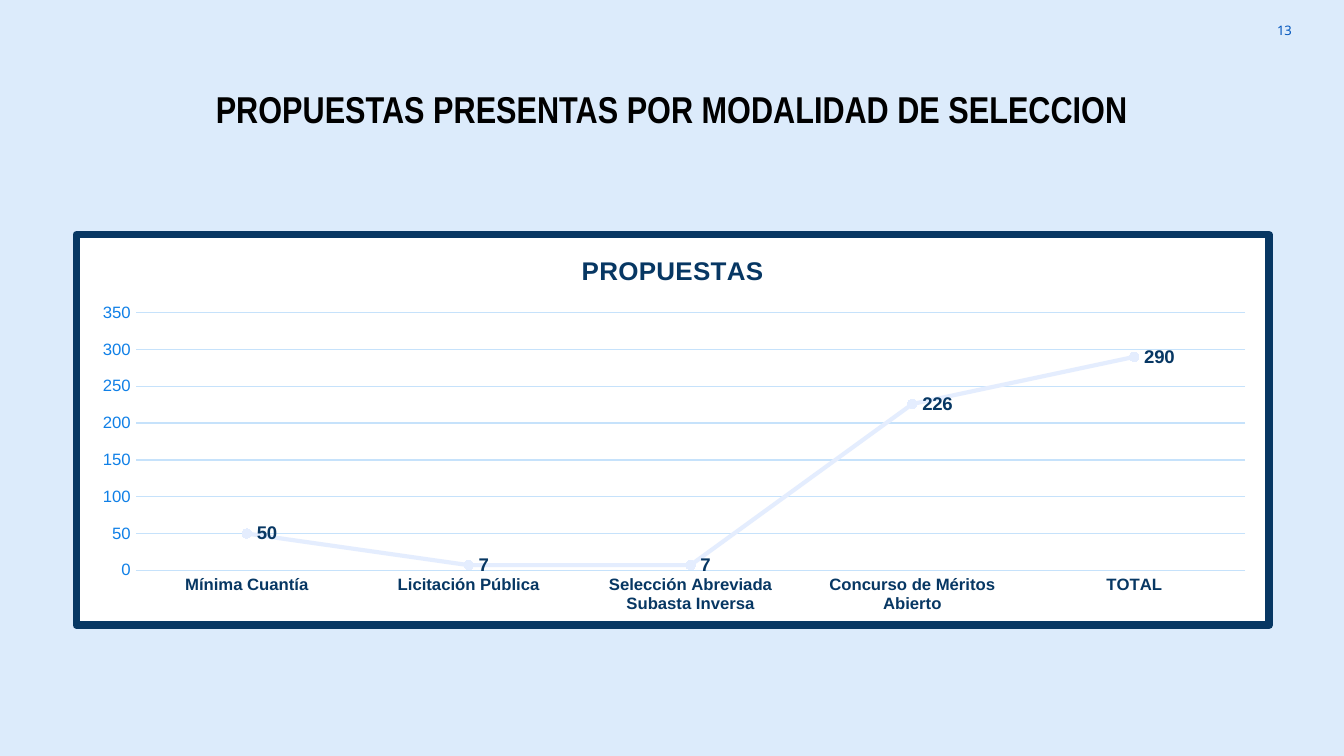
"""Build the slide of proposals by selection method."""
from lxml import etree
from pptx import Presentation
from pptx import util as u
from pptx.chart.data import CategoryChartData
from pptx.dml.color import RGBColor
from pptx.enum import chart as charts, text
from pptx.oxml import ns, parse_xml

TITLE = "PROPUESTAS PRESENTAS POR MODALIDAD DE SELECCION"
CHART_TITLE = "PROPUESTAS"
PROPOSALS = {
    "Mínima Cuantía": 50,
    "Licitación Pública": 7,
    "Selección Abreviada Subasta Inversa": 7,
    "Concurso de Méritos Abierto": 226,
    "TOTAL": 290,
}
NAVY, GRID, SERIES = "073763", "C6E2FB", "E4EDFE"
PLOT = {"x": 0.05, "y": 0.2, "w": 0.93, "h": 0.66}


def color(code):
    return RGBColor.from_string(code)


def style_font(font, size, code, bold=False, name="Arial"):
    font.size, font.bold, font.name = u.Pt(size), bold, name
    font.color.rgb = color(code)


def style_line(line, code, width):
    line.color.rgb = color(code)
    line.width = u.Pt(width)


def add_text(page, words, *, place, size, code, align, name, bold=False, inset=7.2, wrap=True):
    box = page.shapes.add_textbox(*map(u.Pt, place))
    frame = box.text_frame
    frame.word_wrap = wrap
    frame.vertical_anchor = text.MSO_ANCHOR.MIDDLE
    frame.margin_top = frame.margin_bottom = u.Pt(inset)
    para = frame.paragraphs[0]
    para.alignment = align
    span = para.add_run()
    span.text = words
    style_font(span.font, size, code, bold, name)


def frame_chart(chart):
    border = parse_xml(
        f'<c:spPr {ns.nsdecls("c", "a")}>'
        '<a:solidFill><a:srgbClr val="FFFFFF"/></a:solidFill>'
        f'<a:ln w="{u.Pt(4)}"><a:solidFill><a:srgbClr val="{NAVY}"/></a:solidFill>'
        '<a:round/></a:ln></c:spPr>')
    chart.element.find(ns.qn("c:txPr")).addprevious(border)


def place_plot(chart):
    area = chart.element.find(".//" + ns.qn("c:plotArea"))
    for old in area.findall(ns.qn("c:layout")):
        area.remove(old)
    layout = etree.Element(ns.qn("c:layout"))
    manual = etree.SubElement(layout, ns.qn("c:manualLayout"))
    settings = {"layoutTarget": "inner", "xMode": "edge", "yMode": "edge", **PLOT}
    for tag, value in settings.items():
        etree.SubElement(manual, ns.qn(f"c:{tag}")).set("val", str(value))
    area.insert(0, layout)


def add_proposals_chart(page, place):
    data = CategoryChartData(number_format="0")
    data.categories = list(PROPOSALS)
    data.add_series(CHART_TITLE, list(PROPOSALS.values()))
    kind = charts.XL_CHART_TYPE.LINE_MARKERS_STACKED
    chart = page.shapes.add_chart(kind, *map(u.Pt, place), data).chart
    style_font(chart.font, 10, NAVY)
    chart.has_legend = False
    chart.has_title = True
    heading = chart.chart_title.text_frame
    heading.text = CHART_TITLE
    style_font(heading.paragraphs[0].runs[0].font, 14, NAVY, True)

    categories, values = chart.category_axis, chart.value_axis
    for axis, code, bold in ((categories, NAVY, True), (values, "1080E7", False)):
        axis.major_tick_mark = axis.minor_tick_mark = charts.XL_TICK_MARK.NONE
        style_font(axis.tick_labels.font, 9, code, bold)
    style_line(categories.format.line, GRID, 0.75)
    values.format.line.fill.background()
    values.has_major_gridlines = True
    style_line(values.major_gridlines.format.line, GRID, 0.75)
    values.minimum_scale, values.maximum_scale, values.major_unit = 0, 350, 50
    values.tick_labels.number_format = "0"
    values.tick_labels.number_format_is_linked = False

    plot = chart.plots[0]
    plot.vary_by_categories = False
    series = plot.series[0]
    series.smooth = False
    style_line(series.format.line, SERIES, 2.25)
    marker = series.marker
    marker.style, marker.size = charts.XL_MARKER_STYLE.CIRCLE, 5
    marker.format.fill.solid()
    marker.format.fill.fore_color.rgb = color(SERIES)
    style_line(marker.format.line, SERIES, 0.75)
    labels = series.data_labels
    labels.show_value = True
    labels.number_format, labels.number_format_is_linked = "0", False
    labels.position = charts.XL_LABEL_POSITION.RIGHT
    style_font(labels.font, 10, NAVY, True)
    frame_chart(chart)
    place_plot(chart)


def main():
    deck = Presentation()
    deck.slide_width, deck.slide_height = u.Pt(720), u.Pt(405)
    page = deck.slides.add_slide(deck.slide_layouts[6])
    page.background.fill.solid()
    page.background.fill.fore_color.rgb = color("DCEBFB")
    add_text(page, "13", place=(656, 0.7, 43.2, 31), size=7, code="0054BC",
             align=text.PP_ALIGN.RIGHT, name="Noto Sans")
    add_text(page, TITLE, place=(105.8, 42.5, 508.4, 31.5), size=20, code="000000",
             align=text.PP_ALIGN.CENTER, name="Arial Narrow", bold=True, inset=3.6, wrap=False)
    add_proposals_chart(page, (38.9, 123.8, 643, 213.1))
    deck.save("out.pptx")


if __name__ == "__main__":
    main()
